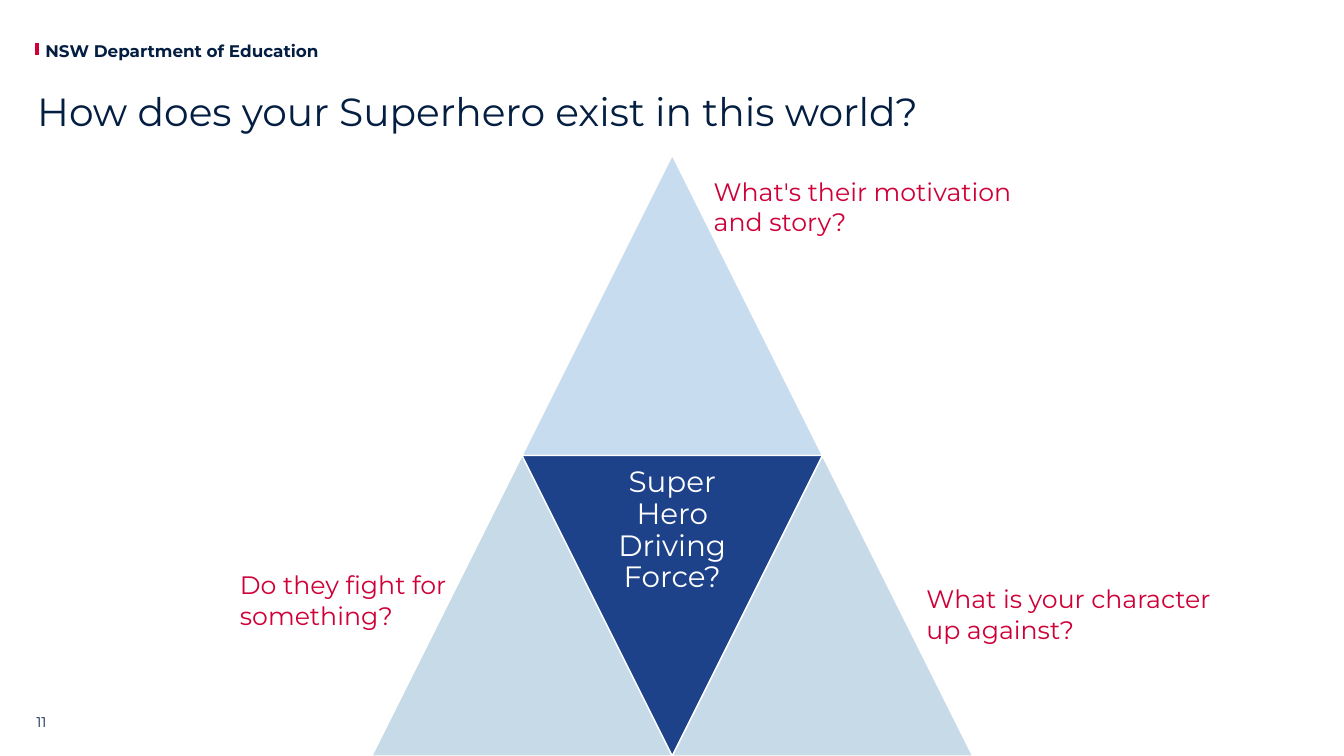
from lxml import etree
from pptx import Presentation
from pptx.dml.color import RGBColor
from pptx.enum import shapes as sh, text as tx
from pptx.oxml.ns import qn
from pptx.util import Pt

NAVY = RGBColor(0x04, 0x1E, 0x42)
RED = RGBColor(0xCE, 0x00, 0x37)
BLUE = RGBColor(0x1D, 0x42, 0x8A)
SKY = RGBColor(0xC8, 0xDC, 0xF0)
MIST = RGBColor(0xC6, 0xDA, 0xE7)
WHITE = RGBColor(0xFF, 0xFF, 0xFF)
FACE = "Montserrat"
SIDE = 214.6
MID = 480.2
TOP = 110.8

deck = Presentation()
deck.slide_width, deck.slide_height = Pt(960), Pt(540)
slide = deck.slides.add_slide(deck.slide_layouts[5])


def write(words, at, box=None, size=18, color=RED, bold=False, wrap=True,
          inset=0, align=tx.PP_ALIGN.LEFT, anchor=tx.MSO_ANCHOR.TOP, lead=1.0):
    """Put formatted words in the given box, or in a new text box."""
    left, top, width, height = map(Pt, at)
    if box is None:
        box = slide.shapes.add_textbox(left, top, width, height)
    else:
        box.left, box.top, box.width, box.height = left, top, width, height
    frame = box.text_frame
    frame.text = words
    frame.word_wrap = wrap
    frame.auto_size = tx.MSO_AUTO_SIZE.NONE
    frame.vertical_anchor = anchor
    frame.margin_left = frame.margin_right = Pt(inset)
    frame.margin_top = frame.margin_bottom = Pt(inset)
    para = frame.paragraphs[0]
    para.alignment = align
    para.line_spacing = lead
    font = para.runs[0].font
    font.name, font.size, font.bold = FACE, Pt(size), bold
    font.color.rgb = color


# Header and title
bar = slide.shapes.add_connector(
    sh.MSO_CONNECTOR.STRAIGHT, Pt(26.6), Pt(30.5), Pt(26.6), Pt(39))
bar.line.color.rgb = RED
bar.line.width = Pt(2.5)
etree.SubElement(bar._element.spPr, qn("a:effectLst"))
write("NSW Department of Education", (32.4, 28.8, 197.3, 14.4),
      size=12, color=NAVY, bold=True, wrap=False)
write("How does your Superhero exist in this world?", (26.6, 61.2, 903.6, 39.6),
      box=slide.shapes.title, size=28, color=NAVY,
      anchor=tx.MSO_ANCHOR.MIDDLE, lead=0.9)
write("11", (25.9, 493.2, 32.4, 28.8), size=10, color=NAVY,
      anchor=tx.MSO_ANCHOR.BOTTOM)

# Pyramid: column in half sides from the middle, row, fill, turn
for col, row, fill, turn in [(0, 0, SKY, 0), (-1, 1, MIST, 0),
                             (0, 1, BLUE, 180), (1, 1, MIST, 0)]:
    tri = slide.shapes.add_shape(
        sh.MSO_SHAPE.ISOSCELES_TRIANGLE, Pt(MID + (col - 1) * SIDE / 2),
        Pt(TOP + row * SIDE), Pt(SIDE), Pt(SIDE))
    tri.rotation = turn
    tri.shadow.inherit = False
    tri.fill.solid()
    tri.fill.fore_color.rgb = fill
    tri.line.color.rgb = WHITE
    tri.line.width = Pt(1)

write("Super Hero Driving Force?", (MID - SIDE / 4, TOP + SIDE, SIDE / 2, SIDE / 2),
      size=21, color=WHITE, inset=6.3, align=tx.PP_ALIGN.CENTER,
      anchor=tx.MSO_ANCHOR.MIDDLE, lead=0.9)

# Questions beside the pyramid
for words, left, top in [("What's their motivation and story?", 509.8, 126),
                         ("Do they fight for something?", 171.4, 407),
                         ("What is your character up against?", 661.7, 417)]:
    write(words, (left, top, 216, 44))

deck.save("out.pptx")
